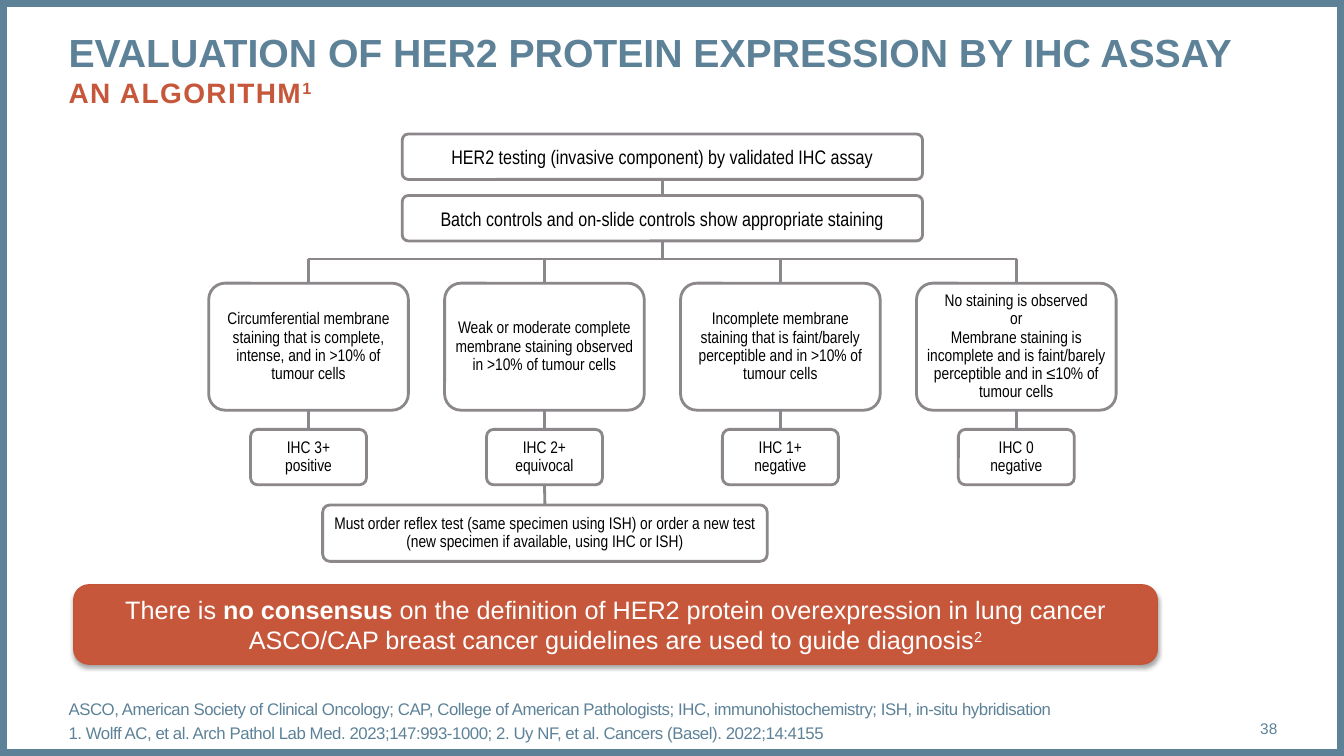
from lxml.etree import SubElement
from pptx import Presentation
from pptx.dml.color import RGBColor
from pptx.enum.shapes import MSO_CONNECTOR, MSO_SHAPE
from pptx.enum.text import MSO_ANCHOR, PP_ALIGN
from pptx.oxml.ns import qn
from pptx.util import Inches, Pt

BLUE, RED, RED_EDGE = "5D8298", "C6573B", "C55336"
GREY, WHITE, BLACK = "8B878B", "FFFFFF", "000000"
TOP, BOTTOM = 0, 2
color = RGBColor.from_string

prs = Presentation()
prs.slide_width, prs.slide_height = Inches(13.33), Inches(7.5)
slide = prs.slides.add_slide(prs.slide_layouts[6])
shapes = slide.shapes


def write(holder, paragraphs, size=12, font="Arial", ink=BLACK, align=PP_ALIGN.CENTER,
          anchor=MSO_ANCHOR.MIDDLE, inset=0, line_spacing=None, gap=0, tracking=0):
    """Fill a shape; a paragraph is a string or a list of (text, run format) pairs."""
    frame = holder.text_frame
    frame.word_wrap, frame.vertical_anchor = True, anchor
    frame.margin_left = frame.margin_right = Inches(inset)
    frame.margin_top = frame.margin_bottom = Inches(min(inset, 0.05))
    for i, runs in enumerate(paragraphs):
        paragraph = frame.add_paragraph() if i else frame.paragraphs[0]
        paragraph.alignment = align
        if line_spacing:
            paragraph.line_spacing = line_spacing
        if i and gap:
            paragraph.space_before = Pt(gap)
        for text, style in [(runs, {})] if isinstance(runs, str) else runs:
            for j, line in enumerate(text.split("\n")):
                if j:
                    paragraph.add_line_break()
                run = paragraph.add_run()
                run.text = line
                run.font.name = font
                run.font.size = Pt(style.get("size", size))
                run.font.bold = style.get("bold", False)
                run.font.color.rgb = color(style.get("ink", ink))
                properties = run._r.get_or_add_rPr()
                spacing = style.get("tracking", tracking)
                if spacing:
                    properties.set("spc", str(round(spacing * 100)))
                if style.get("superscript"):
                    properties.set("baseline", "30000")


def add_box(left, top, width, height, fill=WHITE, edge=GREY, weight=2, rounding=0.128):
    box = shapes.add_shape(MSO_SHAPE.ROUNDED_RECTANGLE, Inches(left), Inches(top),
                           Inches(width), Inches(height))
    box.adjustments[0] = rounding
    box.shadow.inherit = False
    box.fill.solid()
    box.fill.fore_color.rgb = color(fill)
    box.line.color.rgb = color(edge)
    box.line.width = Pt(weight)
    return box


# Slide border
border = shapes.add_shape(MSO_SHAPE.RECTANGLE, 0, 0, prs.slide_width, prs.slide_height)
border.shadow.inherit = False
border.fill.background()
border.line.color.rgb = color(BLUE)
border.line.width = Pt(10)

# Title, footnotes and page number
subtitle = dict(size=20, bold=True, ink=RED, tracking=1)
title = shapes.add_textbox(Inches(0.68), Inches(0.28), Inches(11.99), Inches(0.94))
write(title, [
    [("EVALUATION OF HER2 PROTEIN EXPRESSION BY IHC ASSAY", dict(size=28, bold=True))],
    [("AN ALGORITHM", subtitle), ("1", dict(subtitle, superscript=True))],
], ink=BLUE, align=PP_ALIGN.LEFT, anchor=MSO_ANCHOR.TOP)

footnotes = shapes.add_textbox(Inches(0.68), Inches(6.95), Inches(11.13), Inches(0.4))
write(footnotes, [
    "ASCO, American Society of Clinical Oncology; CAP, College of American Pathologists; "
    "IHC, immunohistochemistry; ISH, in-situ hybridisation",
    "1. Wolff AC, et al. Arch Pathol Lab Med. 2023;147:993-1000; "
    "2. Uy NF, et al. Cancers (Basel). 2022;14:4155",
], ink=BLUE, align=PP_ALIGN.LEFT, gap=3, tracking=-0.3)

page_number = shapes.add_textbox(Inches(11.81), Inches(7.03), Inches(0.86), Inches(0.4))
write(page_number, ["38"], size=11, ink=BLUE, align=PP_ALIGN.RIGHT)

# Testing steps at the top of the algorithm
step_style = dict(size=14, font="Arial Narrow", inset=0.05)
testing = add_box(3.99, 1.33, 5.16, 0.45)
write(testing, ["HER2 testing (invasive component) by validated IHC assay"], **step_style)
controls = add_box(3.99, 1.94, 5.16, 0.45)
write(controls, ["Batch controls and on-slide controls show appropriate staining"], **step_style)

# Four staining patterns, each with its score
trunk_x, branch_y = 6.57, 2.57
first_x, column_step = 3.06, 2.34
branch_style = dict(font="Arial Narrow", inset=0.05, line_spacing=0.9)
branches = [
    (["Circumferential membrane staining that is complete, intense, and in >10% of tumour cells"],
     "IHC 3+\npositive"),
    (["Weak or moderate complete membrane staining observed in >10% of tumour cells"],
     "IHC 2+\nequivocal"),
    (["Incomplete membrane staining that is faint/barely perceptible and in >10% of tumour cells"],
     "IHC 1+\nnegative"),
    (["No staining is observed\nor",
      "Membrane staining is incomplete and is faint/barely perceptible and in ≤10% of tumour cells"],
     "IHC 0\nnegative"),
]
# Each link: start point, end point, box it leaves, box it enters
links = [
    ((trunk_x, 1.78), (trunk_x, 1.94), testing, controls),
    ((trunk_x, 2.39), (trunk_x, branch_y), controls, None),
    ((first_x - 0.01, branch_y), (first_x + 3 * column_step + 0.01, branch_y), None, None),
]
scores = []
for column, (finding, result) in enumerate(branches):
    x = first_x + column * column_step
    pattern = add_box(x - 0.99, 2.81, 1.98, 1.26)
    write(pattern, finding, **branch_style)
    score = add_box(x - 0.575, 4.26, 1.15, 0.55)
    write(score, [result], **branch_style)
    scores.append(score)
    links += [((x, branch_y), (x, 2.81), None, pattern),
              ((x, 4.07), (x, 4.26), pattern, score)]

# Follow-up of the equivocal score
reflex_test = add_box(3.2, 5.01, 4.41, 0.56)
write(reflex_test, ["Must order reflex test (same specimen using ISH) or order a new test\n"
                    "(new specimen if available, using IHC or ISH)"], **branch_style)
equivocal_x = first_x + column_step
links.append(((equivocal_x, 4.81), (equivocal_x, 5.01), scores[1], reflex_test))

# Lines of the algorithm
for (x1, y1), (x2, y2), source, target in links:
    link = shapes.add_connector(MSO_CONNECTOR.STRAIGHT, Inches(x1), Inches(y1),
                                Inches(x2), Inches(y2))
    if source:
        link.begin_connect(source, BOTTOM)
    if target:
        link.end_connect(target, TOP)
    link.line.color.rgb = color(GREY)
    link.line.width = Pt(2)
    SubElement(link._element.spPr, qn("a:effectLst"))

# Key message with its soft shadow
message = add_box(0.73, 5.8, 10.75, 0.79, fill=RED, edge=RED_EDGE, weight=0.75, rounding=0.194)
write(message, [
    [("There is ", {}), ("no consensus ", dict(bold=True)),
     ("on the definition of HER2 protein overexpression in lung cancer", {})],
    [("ASCO/CAP breast cancer guidelines are used to guide diagnosis", {}),
     ("2", dict(superscript=True))],
], size=18, ink=WHITE, inset=0.1)
effects = message._element.spPr.find(qn("a:effectLst"))
shadow = SubElement(effects, qn("a:outerShdw"), blurRad=str(Pt(3.1)), dist=str(Pt(1.8)),
                    dir="5400000", rotWithShape="0")
shadow_color = SubElement(shadow, qn("a:srgbClr"), val=BLACK)
SubElement(shadow_color, qn("a:alpha"), val="35000")

prs.save("out.pptx")
